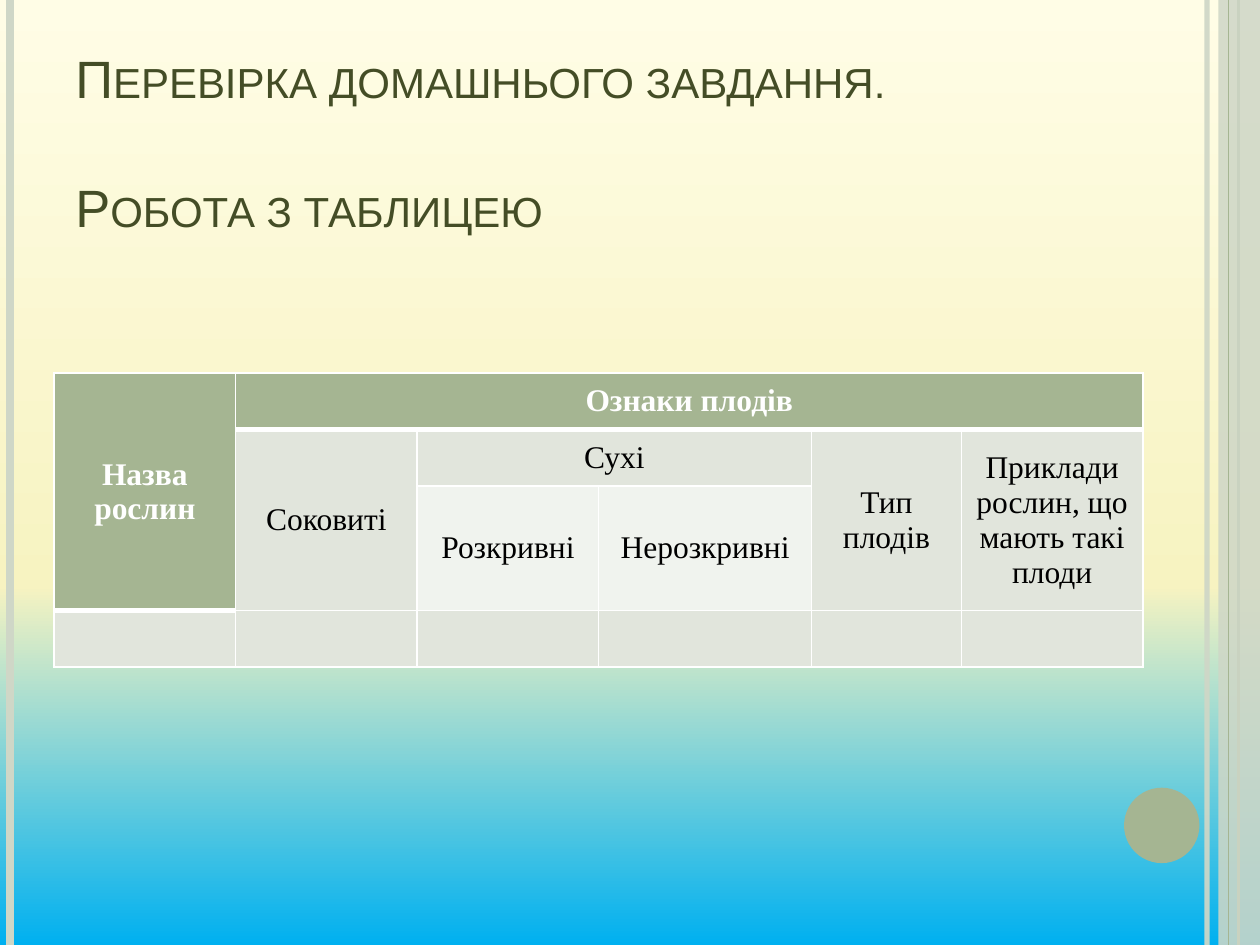
from copy import deepcopy
from dataclasses import dataclass

from lxml.etree import SubElement
from pptx import Presentation
from pptx.dml.color import RGBColor
from pptx.enum.shapes import MSO_CONNECTOR, MSO_SHAPE
from pptx.enum.text import MSO_ANCHOR, PP_ALIGN
from pptx.oxml.ns import qn
from pptx.util import Cm, Pt

COLORS = {
    "sky": "00B0F0", "sand": "F7F3C1", "cream": "FFFDE6",
    "stripe": "CFD7C7", "sage": "A5B592", "title": "444D26",
    "band": "E1E5DC", "light": "F0F3EE", "white": "FFFFFF", "black": "000000",
}
WIDTH, HEIGHT = 25.4, 19.05  # centimetres


@dataclass
class Stripe:
    x: float
    points: float
    color: str
    opacity: int = 100


@dataclass
class TableCell:
    row: int
    column: int
    text: str = ""
    fill: str = "band"
    rows: int = 1
    columns: int = 1

    @property
    def is_header(self) -> bool:
        return self.fill == "sage"


STRIPES = [
    Stripe(24.33, 3, "stripe", 93),
    Stripe(0.2, 4.5, "stripe"),
    Stripe(24.97, 1.5, "sage"),
    Stripe(24.77, 0.75, "sage"),
]
COLUMN_WIDTHS = [3.66, 3.66, 3.66, 4.29, 3.02, 3.66]
ROW_HEIGHTS = [1.14, 1.14, 2.51, 1.14]
CELLS = [
    TableCell(0, 0, "Назва рослин", "sage", rows=3),
    TableCell(0, 1, "Ознаки плодів", "sage", columns=5),
    TableCell(1, 1, "Соковиті", rows=2),
    TableCell(1, 2, "Сухі", columns=2),
    TableCell(1, 4, "Тип плодів", rows=2),
    TableCell(1, 5, "Приклади рослин, що мають такі плоди", rows=2),
    TableCell(2, 2, "Розкривні", "light"),
    TableCell(2, 3, "Нерозкривні", "light"),
] + [TableCell(3, column) for column in range(len(COLUMN_WIDTHS))]


def rgb(name: str) -> RGBColor:
    return RGBColor.from_string(COLORS[name])


def set_opacity(fill_parent, percent: int) -> None:
    if percent < 100:
        color = next(fill_parent.iter(qn("a:srgbClr")))
        SubElement(color, qn("a:alpha"), val=str(percent * 1000))


def paint_background(slide) -> None:
    fill = slide.background.fill
    fill.gradient()
    fill.gradient_angle = 90
    stop_list = next(slide.background._cSld.iter(qn("a:gsLst")))
    stop_list.append(deepcopy(stop_list[-1]))
    stops = [(0, "sky"), (0.38, "sand"), (1, "cream")]
    for stop, (position, color) in zip(fill.gradient_stops, stops):
        stop.position = position
        stop.color.rgb = rgb(color)


def draw_stripe(slide, stripe: Stripe) -> None:
    connector = slide.shapes.add_connector(
        MSO_CONNECTOR.STRAIGHT, Cm(stripe.x), Cm(0), Cm(stripe.x), Cm(HEIGHT))
    connector.line.width = Pt(stripe.points)
    connector.line.color.rgb = rgb(stripe.color)
    properties = connector._element.spPr
    set_opacity(properties, stripe.opacity)
    SubElement(properties, qn("a:effectLst"))


def draw_shape(slide, kind: MSO_SHAPE, left: float, top: float, width: float,
               height: float, color: str, opacity: int = 100) -> None:
    shape = slide.shapes.add_shape(kind, Cm(left), Cm(top), Cm(width), Cm(height))
    shape.fill.solid()
    shape.fill.fore_color.rgb = rgb(color)
    set_opacity(shape._element.spPr, opacity)
    shape.line.fill.background()
    shape.shadow.inherit = False


def draw_title(slide, lines: list[str]) -> None:
    frame = slide.shapes.add_textbox(Cm(1.27), Cm(0.76), Cm(22.02), Cm(4.17)).text_frame
    frame.word_wrap = True
    frame.vertical_anchor = MSO_ANCHOR.BOTTOM
    frame.text = "\n".join(lines)
    for paragraph in frame.paragraphs:
        paragraph.font.name = "Arial"
        paragraph.font.size = Pt(30)
        paragraph.font.color.rgb = rgb("title")
        paragraph.font._element.set("cap", "small")
    frame.paragraphs[-1].space_before = Pt(38)


def set_borders(cell, top: float, bottom: float) -> None:
    properties = cell._tc.get_or_add_tcPr()
    for side, points in (("L", 1), ("R", 1), ("T", top), ("B", bottom)):
        line = SubElement(properties, qn(f"a:ln{side}"), w=str(Pt(points)))
        solid = SubElement(line, qn("a:solidFill"))
        SubElement(solid, qn("a:srgbClr"), val=COLORS["white"])


def fill_cell(table, item: TableCell, header_ends: set) -> None:
    last_row = item.row + item.rows - 1
    last_column = item.column + item.columns - 1
    for row in range(item.row, last_row + 1):
        for column in range(item.column, last_column + 1):
            cell = table.cell(row, column)
            set_borders(cell, 3 if (row - 1, column) in header_ends else 1,
                        3 if item.is_header else 1)
            cell.fill.solid()
            cell.fill.fore_color.rgb = rgb(item.fill)
    cell = table.cell(item.row, item.column)
    if (item.rows, item.columns) != (1, 1):
        cell.merge(table.cell(last_row, last_column))
    cell.text = item.text
    cell.vertical_anchor = MSO_ANCHOR.MIDDLE
    paragraph = cell.text_frame.paragraphs[0]
    paragraph.alignment = PP_ALIGN.CENTER
    paragraph.font.name = "Times New Roman"
    paragraph.font.size = Pt(18)
    paragraph.font.bold = item.is_header
    paragraph.font.color.rgb = rgb("white" if item.is_header else "black")


def draw_table(slide) -> None:
    table = slide.shapes.add_table(
        len(ROW_HEIGHTS), len(COLUMN_WIDTHS), Cm(1.09), Cm(7.52),
        Cm(sum(COLUMN_WIDTHS)), Cm(sum(ROW_HEIGHTS))).table
    table.first_row = table.horz_banding = False
    for column, width in zip(table.columns, COLUMN_WIDTHS):
        column.width = Cm(width)
    for row, height in zip(table.rows, ROW_HEIGHTS):
        row.height = Cm(height)
    # Header cells close with a thick rule, shared with the cell below
    header_ends = {(item.row + item.rows - 1, item.column + offset)
                   for item in CELLS if item.is_header
                   for offset in range(item.columns)}
    for item in CELLS:
        fill_cell(table, item, header_ends)


def main() -> None:
    presentation = Presentation()
    presentation.slide_width, presentation.slide_height = Cm(WIDTH), Cm(HEIGHT)
    slide = presentation.slides.add_slide(presentation.slide_layouts[6])

    # Background and side decoration
    paint_background(slide)
    for stripe in STRIPES[:3]:
        draw_stripe(slide, stripe)
    draw_shape(slide, MSO_SHAPE.RECTANGLE, 24.56, 0, 0.84, HEIGHT, "stripe", 87)
    draw_stripe(slide, STRIPES[3])
    draw_shape(slide, MSO_SHAPE.OVAL, 22.66, 15.88, 1.52, 1.52, "sage")

    # Content
    draw_title(slide, ["Перевірка домашнього завдання.", "Робота з таблицею"])
    draw_table(slide)

    presentation.save("out.pptx")


if __name__ == "__main__":
    main()
